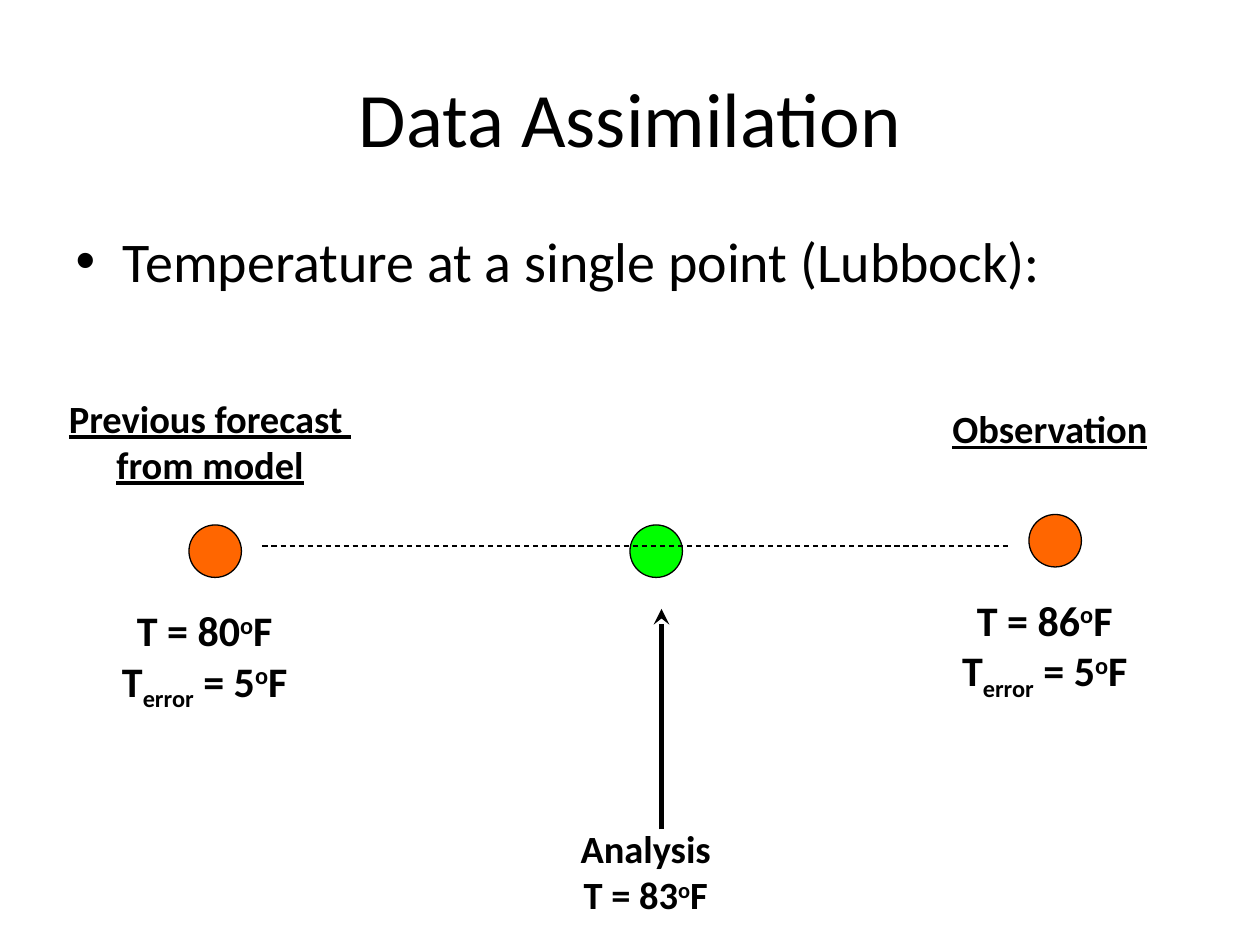
"""Build the data assimilation slide: forecast, observation and analysis."""
from lxml.etree import SubElement
from pptx import Presentation
from pptx.dml.color import RGBColor
from pptx.enum.dml import MSO_LINE_DASH_STYLE as Dash
from pptx.enum.shapes import MSO_CONNECTOR as Conn, MSO_SHAPE as Shape
from pptx.enum.text import MSO_ANCHOR as Anchor, MSO_AUTO_SIZE as Auto, PP_ALIGN as Align
from pptx.oxml.ns import qn
from pptx.util import Pt

BLACK = RGBColor(0, 0, 0)
ORANGE = RGBColor(0xFF, 0x66, 0)
GREEN = RGBColor(0, 0xFF, 0)

TITLE = "Data Assimilation"
POINT = "Temperature at a single point (Lubbock):"
DEGREE = [("o", 30), ("F", 0)]
ERROR = [("T", 0), ("error", -25), (" = 5", 0), *DEGREE]
SIDES = [
    {"x": 0, "y": 222, "temp": "T = 80", "head": ["Previous forecast ", "from model"]},
    {"x": 480, "y": 228 - 12, "temp": "T = 86", "head": ["Observation"]},
]
SIDES[0].update(head_y=222, y=0)
SIDES[1].update(head_y=228, y=-6)
RESULT = [[("Analysis", 0)], [("T = 83", 0), *DEGREE]]
DOT = 30


def style(font, **form):
    for key, value in {"name": "Calibri", **form}.items():
        setattr(font, key, value)
    font.color.rgb = BLACK


def add_text(slide, box, lines, **form):
    shape = slide.shapes.add_textbox(*map(Pt, box))
    frame = shape.text_frame
    frame.word_wrap = True
    frame.auto_size = Auto.SHAPE_TO_FIT_TEXT
    for i, line in enumerate(lines):
        para = frame.add_paragraph() if i else frame.paragraphs[0]
        para.alignment = Align.CENTER
        for text, base in line:
            run = para.add_run()
            run.text = text
            style(run.font, bold=True, **form)
            if base:
                run._r.get_or_add_rPr().set("baseline", str(base * 1000))


def add_dot(slide, x, y, color):
    dot = slide.shapes.add_shape(Shape.OVAL, *map(Pt, (x, y, DOT, DOT)))
    dot.shadow.inherit = False
    dot.fill.solid()
    dot.fill.fore_color.rgb = color
    dot.line.color.rgb = BLACK
    dot.line.width = Pt(0.75)


def add_line(slide, ends, width):
    link = slide.shapes.add_connector(Conn.STRAIGHT, *map(Pt, ends))
    link.line.color.rgb = BLACK
    link.line.width = Pt(width)
    SubElement(link._element.spPr, qn("a:effectLst"))
    return link.line


def fill_holder(holder, box, text, size):
    holder.left, holder.top, holder.width, holder.height = map(Pt, box)
    holder.text_frame.text = text
    para = holder.text_frame.paragraphs[0]
    para.space_before = Pt(0)
    style(para.runs[0].font, size=Pt(size))
    return para


def main():
    deck = Presentation()
    deck.slide_width, deck.slide_height = Pt(720), Pt(540)
    slide = deck.slides.add_slide(deck.slide_layouts[1])
    title, body = slide.placeholders
    fill_holder(title, (36, 21.6, 648, 90), TITLE, 44).alignment = Align.CENTER
    title.text_frame.vertical_anchor = Anchor.MIDDLE
    fill_holder(body, (36, 126, 648, 356.4), POINT, 32)

    for side in SIDES:
        x, y, head = side["x"], side["y"], side["head"]
        add_dot(slide, x + 108, y + 300, ORANGE)
        temp = [[(side["temp"], 0), *DEGREE], ERROR]
        add_text(slide, (x + 30, y + 342, 174, 65.5), temp, size=Pt(24))
        add_text(slide, (x, side["head_y"], 240, 7 + 26.5 * len(head)),
                 [[(line, 0)] for line in head], size=Pt(22), underline=True)

    add_dot(slide, 360, 300, GREEN)
    add_line(slide, (150, 312, 576, 312), 0.75).dash_style = Dash.DASH
    add_text(slide, (294, 468, 150, 60), RESULT, size=Pt(22))
    arrow = add_line(slide, (378, 474, 378, 348), 3)
    SubElement(arrow._get_or_add_ln(), qn("a:tailEnd"), type="stealth")
    deck.save("out.pptx")


if __name__ == "__main__":
    main()
